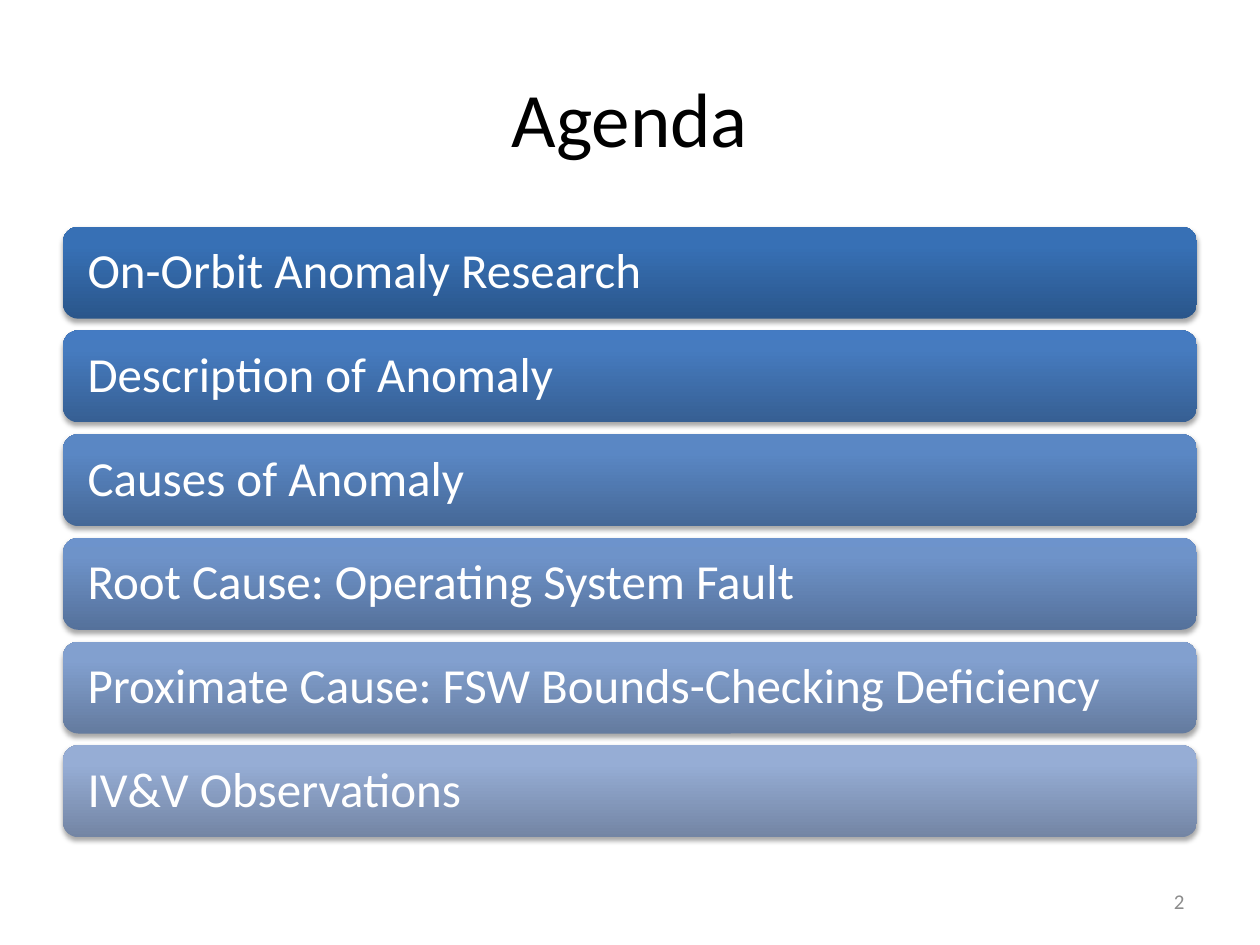
from lxml import etree
from pptx import Presentation
from pptx.dml.color import RGBColor
from pptx.enum.shapes import MSO_SHAPE as SHAPE
from pptx.enum.text import MSO_ANCHOR as ANCHOR, PP_ALIGN as ALIGN
from pptx.oxml import parse_xml
from pptx.oxml.ns import nsdecls
from pptx.util import Inches, Pt


def style(p, size, color, align):
    p.alignment = align
    p.font.name = "Calibri"
    p.font.size = Pt(size)
    p.font.color.rgb = RGBColor.from_string(color)


def gradient_and_shadow(sp, colors):
    """Fill upwards through three colours and add a soft shadow below."""
    stops = "".join(
        f'<a:gs pos="{pos}000"><a:srgbClr val="{color}"/></a:gs>'
        for pos, color in zip((0, 80, 100), colors))
    sp.fill.background()
    sp.line.fill.background()
    sp.shadow.inherit = False
    spPr = sp._element.spPr
    no_fill = spPr.find("{*}noFill")
    spPr.replace(no_fill, parse_xml(
        f'<a:gradFill {nsdecls("a")} rotWithShape="1"><a:gsLst>{stops}</a:gsLst>'
        '<a:lin ang="16200000" scaled="0"/></a:gradFill>'))
    spPr.find("{*}effectLst").append(parse_xml(
        f'<a:outerShdw {nsdecls("a")} blurRad="{Pt(3.1)}" dist="{Pt(1.8)}" '
        'dir="5400000" rotWithShape="0"><a:srgbClr val="000000">'
        '<a:alpha val="35000"/></a:srgbClr></a:outerShdw>'))


AGENDA = [
    ("On-Orbit Anomaly Research", ("2A568B", "3770B5", "3570B8")),
    ("Description of Anomaly", ("365F93", "467BBF", "447BC3")),
    ("Causes of Anomaly", ("456897", "5A87C4", "5887C7")),
    ("Root Cause: Operating System Fault", ("55719B", "6E93C9", "6D93CC")),
    ("Proximate Cause: FSW Bounds-Checking Deficiency", ("647B9F", "82A0CF", "81A0D1")),
    ("IV&V Observations", ("7385A4", "96ADD5", "95ADD7")),
]

prs = Presentation()
prs.slide_width, prs.slide_height = W, H = Inches(10), Inches(7.5)
s = prs.slides.add_slide(prs.slide_layouts[5])
margin = int(W * 0.05)
width = W - 2 * margin

title = s.shapes.title
title.left, title.top, title.width, title.height = margin, int(H * 0.04), width, Inches(1.25)
title.text_frame.text = "Agenda"
title.text_frame.vertical_anchor = ANCHOR.MIDDLE
style(title.text_frame.paragraphs[0], 44, "000000", ALIGN.CENTER)

top, row, bar_height = int(H * 0.24), Inches(0.823), Inches(0.73)
for i, (text, colors) in enumerate(AGENDA):
    sp = s.shapes.add_shape(SHAPE.ROUNDED_RECTANGLE, margin, top + i * row, width, bar_height)
    gradient_and_shadow(sp, colors)
    tf = sp.text_frame
    tf.word_wrap = True
    tf.vertical_anchor = ANCHOR.MIDDLE
    tf.margin_left = tf.margin_right = tf.margin_top = tf.margin_bottom = Inches(0.16)
    tf.text = text
    p = tf.paragraphs[0]
    p.line_spacing = 0.9
    style(p, 28, "FFFFFF", ALIGN.LEFT)

number_width = Inches(2.33)
number = s.shapes.add_textbox(W - margin - number_width, Inches(6.95), number_width, Inches(0.4))
tf = number.text_frame
tf.word_wrap = True
tf.vertical_anchor = ANCHOR.MIDDLE
tf.text = "2"
style(tf.paragraphs[0], 12, "8C8C8C", ALIGN.RIGHT)

prs.save("out.pptx")
